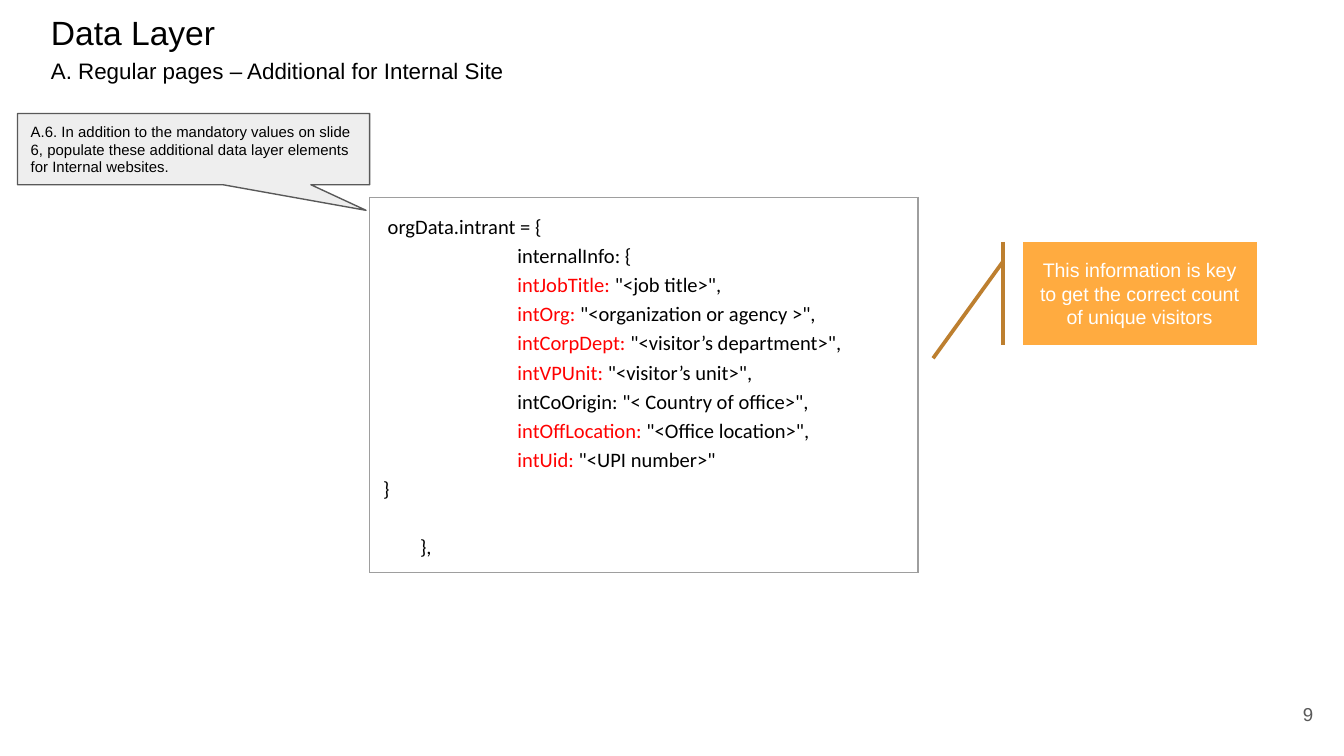
"""Build the data layer slide for additional internal-site elements."""
from typing import NamedTuple

from lxml import etree
from pptx import Presentation
from pptx.dml.color import RGBColor
from pptx.enum.shapes import MSO_SHAPE
from pptx.enum.text import MSO_ANCHOR, PP_ALIGN
from pptx.oxml.ns import qn
from pptx.util import Inches, Pt

CALLOUT, ACCENT = MSO_SHAPE.RECTANGULAR_CALLOUT, MSO_SHAPE.LINE_CALLOUT_1_ACCENT_BAR
TOP, MIDDLE = MSO_ANCHOR.TOP, MSO_ANCHOR.MIDDLE
LEFT, CENTER, RIGHT = PP_ALIGN.LEFT, PP_ALIGN.CENTER, PP_ALIGN.RIGHT

BLACK = RGBColor(0x00, 0x00, 0x00)
WHITE = RGBColor(0xFF, 0xFF, 0xFF)
RED = RGBColor(0xFF, 0x00, 0x00)
GREY = RGBColor(0x59, 0x59, 0x59)
PALE = RGBColor(0xEE, 0xEE, 0xEE)
BORDER = RGBColor(0x9E, 0x9E, 0x9E)
ORANGE = RGBColor(0xFF, 0xAB, 0x40)
BROWN = RGBColor(0xBD, 0x7F, 0x2F)

UNIT = Inches(0.1)
COLS, ROWS = 100, 56.25


class Box(NamedTuple):
    """A place on the slide grid."""
    col: float
    row: float
    cols: float
    rows: float

    def emu(self) -> list[int]:
        """Return left, top, width and height."""
        return [round(n * UNIT) for n in self]


class CodeLine(NamedTuple):
    """A line of code: optional red key, black rest and indent in columns."""
    key: str
    rest: str
    indent: float = 10
    before: float = 0


CODE = [
    CodeLine("", "orgData.intrant = {", 0.35),
    CodeLine("", "internalInfo: {"),
    CodeLine("intJobTitle:", ' "<job title>",'),
    CodeLine("intOrg: ", '"<organization or agency >",'),
    CodeLine("intCorpDept:", ' "<visitor’s department>",'),
    CodeLine("intVPUnit: ", '"<visitor’s unit>",'),
    CodeLine("", 'intCoOrigin: "< Country of office>",'),
    CodeLine("intOffLocation: ", '"<Office location>",'),
    CodeLine("intUid: ", '"<UPI number>"'),
    CodeLine("", "}", 0),
    CodeLine("", "},", 2.75, 15.5),
]


def add_run(p, text: str, *, size: float, color=BLACK, font="Arial") -> None:
    """Add a formatted run to a paragraph."""
    r = p.add_run()
    r.text = text
    r.font.size, r.font.name = Pt(size), font
    r.font.color.rgb = color


def write(sp, text: str, *, align=LEFT, anchor=TOP, inset=1.0, **style) -> None:
    """Fill a shape with one wrapped paragraph."""
    tf = sp.text_frame
    tf.word_wrap, tf.vertical_anchor = True, anchor
    tf.margin_left = tf.margin_right = UNIT
    tf.margin_top = tf.margin_bottom = round(inset * UNIT)
    p = tf.paragraphs[0]
    p.alignment = align
    add_run(p, text, **style)


def add_text(s, box: Box, text: str, **style) -> None:
    """Add a text box."""
    write(s.shapes.add_textbox(*box.emu()), text, **style)


def add_callout(s, kind, box: Box, text: str, *, fill, line, width: float, **style):
    """Add a filled callout with text."""
    sp = s.shapes.add_shape(kind, *box.emu())
    sp.shadow.inherit = False
    sp.fill.solid()
    sp.fill.fore_color.rgb = fill
    sp.line.color.rgb, sp.line.width = line, Pt(width)
    write(sp, text, anchor=MIDDLE, **style)
    return sp


def set_borders(cell, color: RGBColor, width: float) -> None:
    """Draw all four borders of a cell."""
    tc_pr = cell._tc.get_or_add_tcPr()
    for i, side in enumerate(("lnL", "lnR", "lnT", "lnB")):
        ln = etree.Element(qn(f"a:{side}"), w=str(Pt(width)))
        fill = etree.SubElement(ln, qn("a:solidFill"))
        etree.SubElement(fill, qn("a:srgbClr"), val=str(color))
        tc_pr.insert(i, ln)


def add_code(s, box: Box, lines: list[CodeLine]) -> None:
    """Add a one-cell table holding code."""
    table = s.shapes.add_table(1, 1, *box.emu()).table
    table.first_row = table.horz_banding = False
    cell = table.cell(0, 0)
    cell.fill.background()
    set_borders(cell, BORDER, 0.75)
    cell.margin_left = cell.margin_right = UNIT
    cell.margin_top = cell.margin_bottom = UNIT
    tf = cell.text_frame
    for i, line in enumerate(lines):
        p = tf.add_paragraph() if i else tf.paragraphs[0]
        p.line_spacing, p.space_before = 1.15, Pt(line.before)
        p._p.get_or_add_pPr().set("marL", str(round(line.indent * UNIT)))
        for text, color in ((line.key, RED), (line.rest, BLACK)):
            if text:
                add_run(p, text, size=11, color=color, font="Calibri")


def main() -> None:
    """Build and save the slide."""
    prs = Presentation()
    prs.slide_width, prs.slide_height = round(COLS * UNIT), round(ROWS * UNIT)
    s = prs.slides.add_slide(prs.slide_layouts[6])
    add_text(s, Box(2.8, -0.1, 93.2, 3.6), "Data Layer", size=18)
    add_code(s, Box(27.5, 14.7, 40.8, 27.9), CODE)
    note = add_callout(
        s, CALLOUT, Box(1.3, 8.45, 26.2, 5.3),
        "A.6. In addition to the mandatory values on slide 6, populate these "
        "additional data layer elements for Internal websites.",
        fill=PALE, line=GREY, width=0.75, size=8)
    note.adjustments[0], note.adjustments[1] = 0.49, 0.86
    add_text(s, Box(2.8, 3.25, 93.2, 3.6),
             "A. Regular pages – Additional for Internal Site", size=12)
    add_text(s, Box(92.7, 51, 6, 4.3), "9", align=RIGHT, anchor=MIDDLE,
             size=10, color=GREY)
    add_callout(
        s, ACCENT, Box(76.1, 18, 17.4, 7.7),
        "This information is key to get the correct count of unique visitors",
        fill=ORANGE, line=BROWN, width=2, align=CENTER, inset=0.5,
        size=10.5, color=WHITE)
    prs.save("out.pptx")


if __name__ == "__main__":
    main()
